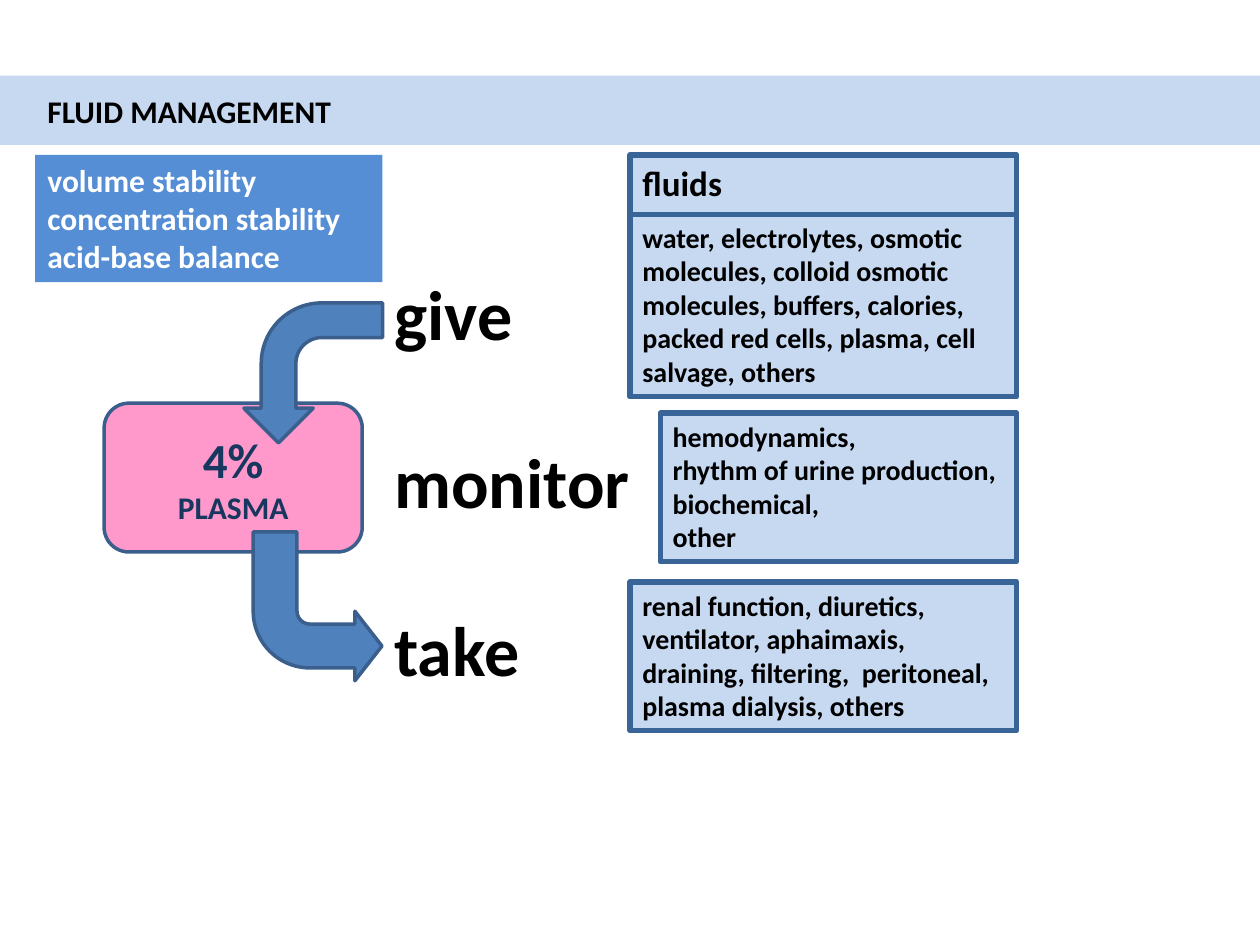
from pptx import Presentation
from pptx.dml.color import RGBColor
from pptx.enum import shapes, text
from pptx.oxml import ns, xmlchemy
from pptx.util import Pt

SHAPE = shapes.MSO_SHAPE
PALE, MID, ARROW = "C6D9F1", "558ED5", "4F81BD"
EDGE, FRAME, NAVY = "3A5F8C", "396497", "17375E"
PINK, WHITE, BLACK = "FF99CC", "FFFFFF", "000000"


def rgb(value):
    return RGBColor.from_string(value)


class SlideBuilder:
    font = "Calibri"

    def __init__(self, slide):
        self.slide = slide

    def add_lines(self, shape, lines, color, align=text.PP_ALIGN.LEFT,
                  anchor=text.MSO_ANCHOR.TOP, gap=0):
        """Set (wording, size) lines in bold, with gap points between them."""
        frame = shape.text_frame
        frame.word_wrap = True
        frame.vertical_anchor = anchor
        for index, (wording, size) in enumerate(lines):
            paragraph = frame.paragraphs[0] if index == 0 else frame.add_paragraph()
            paragraph.alignment = align
            if index and gap:
                paragraph.space_before = Pt(gap)
            run = paragraph.add_run()
            run.text = wording
            run.font.name = self.font
            run.font.size = Pt(size)
            run.font.bold = True
            run.font.color.rgb = rgb(color)

    def label(self, box, lines, gap=0):
        shape = self.slide.shapes.add_textbox(*map(Pt, box))
        self.add_lines(shape, lines, BLACK, gap=gap)

    def shape(self, kind, box, fill, line=None, width=2):
        shape = self.slide.shapes.add_shape(kind, *map(Pt, box))
        shape.shadow.inherit = False
        shape.fill.solid()
        shape.fill.fore_color.rgb = rgb(fill)
        if line:
            shape.line.color.rgb = rgb(line)
            shape.line.width = Pt(width)
        else:
            shape.line.fill.background()
        return shape

    def panel(self, box, lines, gap=0):
        shape = self.shape(SHAPE.RECTANGLE, box, PALE, FRAME, 3)
        self.add_lines(shape, lines, BLACK, gap=gap)

    def bent_arrow(self, box, rotation, adjustments=()):
        """Add a bent arrow, mirrored left to right and then rotated."""
        shape = self.shape(SHAPE.BENT_ARROW, box, ARROW, EDGE)
        for index, value in enumerate(adjustments):
            shape.adjustments[index] = value
        shape.rotation = rotation
        shape._element.spPr.find(ns.qn("a:xfrm")).set("flipH", "1")

    def divider(self, left, right, y):
        line = self.slide.shapes.add_connector(
            shapes.MSO_CONNECTOR.STRAIGHT, Pt(left), Pt(y), Pt(right), Pt(y))
        line.line.color.rgb = rgb(FRAME)
        line.line.width = Pt(3)
        line._element.spPr.append(xmlchemy.OxmlElement("a:effectLst"))


def main():
    presentation = Presentation()
    presentation.slide_width, presentation.slide_height = Pt(720), Pt(540)
    slide = presentation.slides.add_slide(presentation.slide_layouts[6])
    builder = SlideBuilder(slide)

    builder.shape(SHAPE.RECTANGLE, (0, 43.2, 720, 39.6), PALE)
    goals = builder.shape(SHAPE.RECTANGLE, (20, 88.5, 198.5, 72.7), MID)
    builder.add_lines(goals, [(goal, 18) for goal in (
        "volume stability", "concentration stability", "acid-base balance")], WHITE)
    builder.label((20, 49.2, 238, 39), [("FLUID MANAGEMENT", 18)])

    plasma = builder.shape(SHAPE.ROUNDED_RECTANGLE, (59.5, 230.4, 147.5, 85), PINK, EDGE)
    builder.add_lines(plasma, [("4%", 28), ("PLASMA", 18)], NAVY,
                      text.PP_ALIGN.CENTER, text.MSO_ANCHOR.MIDDLE)
    builder.label((218.3, 151.2, 158.4, 250),
                  [(action, 40) for action in ("give", "monitor", "take")], gap=48)
    builder.bent_arrow((139, 173.5, 80, 79.2), 270)
    builder.bent_arrow((144.7, 304, 73.6, 85), 180, (0.34, 0.27, 0.21, 0.44))

    left, indented, right = 360, 377.3, 581
    builder.panel((left, 88.5, right - left, 138.3), [
        ("fluids", 20),
        ("water, electrolytes, osmotic molecules, colloid osmotic molecules, "
         "buffers, calories, packed red cells, plasma, cell salvage, others", 16),
    ], gap=9.7)
    builder.divider(left, right, 122.4)
    builder.panel((left, 332.5, right - left, 85), [
        ("renal function, diuretics, ventilator, aphaimaxis, draining, filtering,  "
         "peritoneal, plasma dialysis, others", 16)])
    builder.panel((indented, 236, right - indented, 85), [(item, 16) for item in (
        "hemodynamics,", "rhythm of urine production, biochemical,", "other")])

    presentation.save("out.pptx")


if __name__ == "__main__":
    main()
